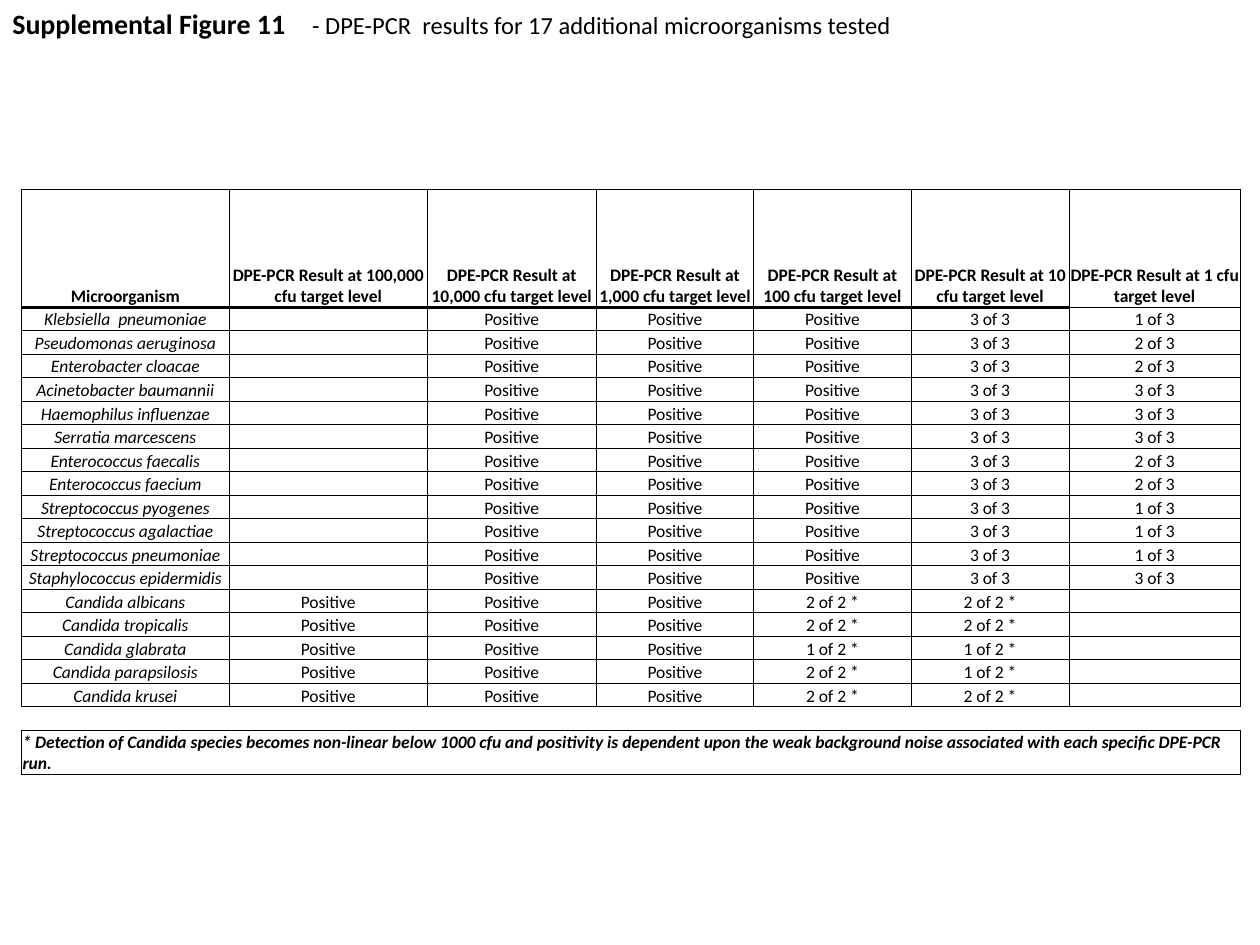
from lxml import etree
from pptx import Presentation
from pptx.dml.color import RGBColor
from pptx.enum.text import MSO_ANCHOR, MSO_AUTO_SIZE, PP_ALIGN
from pptx.oxml.ns import qn
from pptx.util import Pt

BOTTOM = MSO_ANCHOR.BOTTOM
CENTER, LEFT = PP_ALIGN.CENTER, PP_ALIGN.LEFT
FIT_SHAPE = MSO_AUTO_SIZE.SHAPE_TO_FIT_TEXT

FONT = "Calibri"
BLACK = "000000"
THIN, MEDIUM, THICK = 0.5, 1, 2

COLUMN_WIDTHS = [118.8, 113.1, 96.6, 90, 90, 90.2, 97.9]
HEADER_HEIGHT, ROW_HEIGHT, NOTE_HEIGHT = 67.5, 13.45, 25.1

TARGET_LEVELS = ["100,000", "10,000", "1,000", "100", "10", "1"]
HEADINGS = ["Microorganism"] + [
    f"DPE-PCR Result at {level} cfu target level" for level in TARGET_LEVELS
]
BACTERIA = [
    ("Klebsiella  pneumoniae", 1),
    ("Pseudomonas aeruginosa", 2),
    ("Enterobacter cloacae", 2),
    ("Acinetobacter baumannii", 3),
    ("Haemophilus influenzae", 3),
    ("Serratia marcescens", 3),
    ("Enterococcus faecalis", 2),
    ("Enterococcus faecium", 2),
    ("Streptococcus pyogenes", 1),
    ("Streptococcus agalactiae", 1),
    ("Streptococcus pneumoniae", 1),
    ("Staphylococcus epidermidis", 3),
]
YEASTS = [
    ("Candida albicans", 2, 2),
    ("Candida tropicalis", 2, 2),
    ("Candida glabrata", 1, 1),
    ("Candida parapsilosis", 2, 1),
    ("Candida krusei", 2, 2),
]
RESULTS = [
    [name, ""] + ["Positive"] * 3 + ["3 of 3", f"{hits} of 3"]
    for name, hits in BACTERIA
] + [
    [name] + ["Positive"] * 3 + [f"{at_100} of 2 *", f"{at_10} of 2 *", ""]
    for name, at_100, at_10 in YEASTS
]
NOTE = (
    "* Detection of Candida species becomes non-linear below 1000 cfu and positivity "
    "is dependent upon the weak background noise associated with each specific DPE-PCR run."
)


def color(hex_value):
    return RGBColor.from_string(hex_value)


def style_font(paragraph, size, bold=False, italic=False):
    font = paragraph.font
    font.name, font.size = FONT, Pt(size)
    font.bold, font.italic = bold, italic
    font.color.rgb = color(BLACK)


def set_borders(cell, left, right, top, bottom):
    properties = cell._tc.get_or_add_tcPr()
    sides = [("a:lnL", left), ("a:lnR", right), ("a:lnT", top), ("a:lnB", bottom)]
    for position, (tag, width) in enumerate(sides):
        line = etree.Element(qn(tag), w=str(Pt(width)))
        if width:
            fill = etree.SubElement(line, qn("a:solidFill"))
            etree.SubElement(fill, qn("a:srgbClr"), val=BLACK)
        else:
            etree.SubElement(line, qn("a:noFill"))
        properties.insert(position, line)


def fill_cell(cell, text, borders, bold=False, italic=False, align=CENTER):
    cell.margin_left = cell.margin_right = cell.margin_top = Pt(0.7)
    cell.margin_bottom = 0
    cell.vertical_anchor = BOTTOM
    cell.fill.background()
    set_borders(cell, *borders)
    cell.text = text
    paragraph = cell.text_frame.paragraphs[0]
    paragraph.alignment = align
    style_font(paragraph, 10, bold, italic)
    if not text:
        etree.SubElement(paragraph._p, qn("a:endParaRPr"), sz="1000")


def add_results(slide, left, top):
    heights = [HEADER_HEIGHT] + [ROW_HEIGHT] * (len(RESULTS) + 1) + [NOTE_HEIGHT]
    table = slide.shapes.add_table(
        len(heights), len(COLUMN_WIDTHS), Pt(left), Pt(top),
        Pt(sum(COLUMN_WIDTHS)), Pt(sum(heights)),
    ).table
    table.first_row = table.horz_banding = False
    for column, width in zip(table.columns, COLUMN_WIDTHS):
        column.width = Pt(width)
    for row, height in zip(table.rows, heights):
        row.height = Pt(height)

    last_column = len(COLUMN_WIDTHS) - 1
    spacer_row = len(RESULTS) + 1
    note_row = spacer_row + 1
    for column, heading in enumerate(HEADINGS):
        rule = THIN if column == last_column else THICK
        fill_cell(table.cell(0, column), heading, (THIN, THIN, THIN, rule), bold=True)
        for row, result in enumerate(RESULTS, 1):
            upper = rule if row == 1 else THIN
            fill_cell(table.cell(row, column), result[column],
                      (THIN, THIN, upper, THIN), italic=column == 0)
        fill_cell(table.cell(spacer_row, column), "", (0, 0, THIN, MEDIUM))
        fill_cell(table.cell(note_row, column), NOTE if column == 0 else "",
                  (MEDIUM,) * 4, bold=True, italic=True, align=LEFT)
    table.cell(note_row, 0).merge(table.cell(note_row, last_column))


def add_label(slide, box, text, size, bold=False, wrap=True, hanging=0):
    frame = slide.shapes.add_textbox(*map(Pt, box)).text_frame
    frame.word_wrap = wrap
    frame.auto_size = FIT_SHAPE
    paragraph = frame.paragraphs[0]
    paragraph.text = text
    if hanging:
        properties = paragraph._p.get_or_add_pPr()
        properties.set("marL", str(Pt(hanging)))
        properties.set("indent", str(-Pt(hanging)))
    style_font(paragraph, size, bold)


def add_title(slide, left, top):
    add_label(slide, (left, top, 172.8, 26.64), "Supplemental Figure 11", 16,
              bold=True, wrap=False)
    add_label(slide, (left + 171.3, top + 2.2, 725.8, 24.5),
              "- DPE-PCR  results for 17 additional microorganisms tested", 14, hanging=27)


def main():
    presentation = Presentation()
    presentation.slide_width, presentation.slide_height = Pt(720), Pt(540)
    slide = presentation.slides.add_slide(presentation.slide_layouts[6])
    add_results(slide, 12.2, 108)
    add_title(slide, 0, 0)
    presentation.save("out.pptx")


if __name__ == "__main__":
    main()
